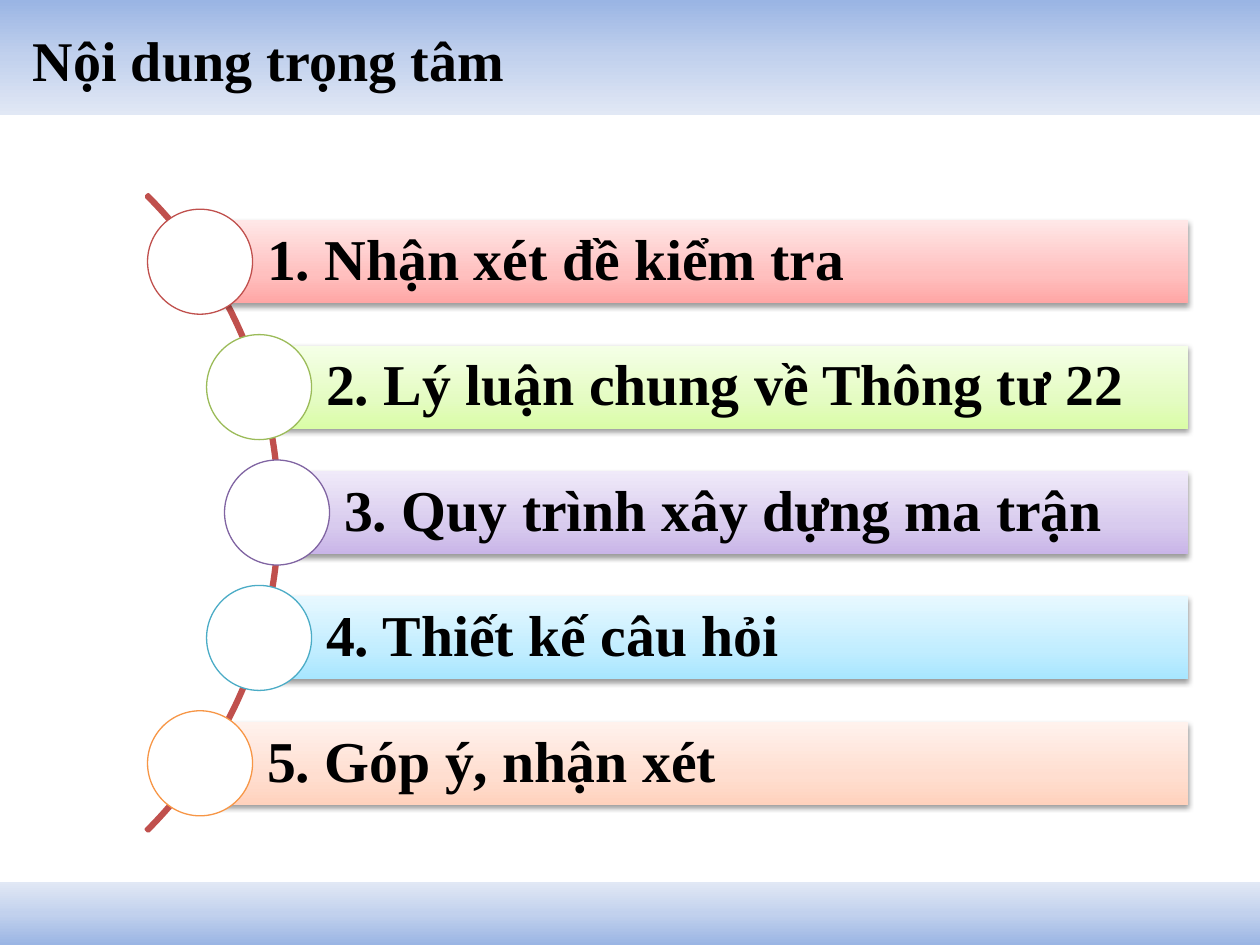
"""Builds the agenda slide: five gradient bars hung on an arc."""
import math
from pptx import Presentation, util as u
from pptx.dml.color import RGBColor
from pptx.enum import shapes, text
from pptx.oxml import parse_xml
from pptx.oxml.ns import nsdecls

TITLE = "Nội dung trọng tâm"
TOPICS = [
    ("1. Nhận xét đề kiểm tra", "C0504D", ("FFA6A5", "FFC0BF", "FFE7E7")),
    ("2. Lý luận chung về Thông tư 22", "9BBB59", ("DAFDA7", "E4FCC2", "F5FFE7")),
    ("3. Quy trình xây dựng ma trận", "8064A2", ("C9B5E8", "D8CBEE", "F0EAF9")),
    ("4. Thiết kế câu hỏi", "4BACC6", ("A7E6FF", "C1EDFF", "E7F8FF")),
    ("5. Góp ý, nhận xét", "F79646", ("FFD2BD", "FFDED0", "FFF2ED")),
]
BAND_COLORS = ("9AB5E4", "C2D1ED", "E1E8F5")
BANDS = [(0, 115, 90), (882, 63, 270)]
ARC_X, ARC_Y, ARC_SIZE = -620, 63, 900
CENTER_X, CENTER_Y, RADIUS = -170, 512.5, 447
PITCH, BAR_HEIGHT, BAR_RIGHT, CIRCLE = 125.4, 83, 1188, 105
FONT = "Times New Roman"


def px(value):
    return u.Emu(round(value * 914400 / 126))


def color(value):
    return RGBColor.from_string(value)


def add_shape(parent, kind, left, top, width, height, line=None, weight=0.75):
    shape = parent.add_shape(kind, px(left), px(top), px(width), px(height))
    shape.shadow.inherit = False
    shape.fill.background()
    if line:
        shape.line.color.rgb = color(line)
        shape.line.width = u.Pt(weight)
    else:
        shape.line.fill.background()
    return shape


def set_gradient(shape, colors, middle, angle):
    shape.fill.gradient()
    shape.fill.gradient_angle = 360 - angle
    stops = "".join(
        f'<a:gs pos="{place * 1000}"><a:srgbClr val="{value}"/></a:gs>'
        for place, value in zip((0, middle, 100), colors))
    old = shape.element.spPr.find(".//{*}gsLst")
    old.getparent().replace(old, parse_xml(f'<a:gsLst {nsdecls("a")}>{stops}</a:gsLst>'))


def add_shadow(shape):
    effects = shape.element.spPr.find("{*}effectLst")
    effects.append(parse_xml(
        f'<a:outerShdw {nsdecls("a")} blurRad="{u.Pt(3.1)}" dist="{u.Pt(1.6)}" dir="5400000" '
        'rotWithShape="0"><a:srgbClr val="000000"><a:alpha val="38000"/></a:srgbClr></a:outerShdw>'))


def write(shape, words, size, insets, spacing=1.0):
    frame = shape.text_frame
    frame.word_wrap = True
    frame.auto_size = text.MSO_AUTO_SIZE.NONE
    frame.vertical_anchor = text.MSO_ANCHOR.MIDDLE
    frame.margin_left, frame.margin_top, frame.margin_right, frame.margin_bottom = map(px, insets)
    para = frame.paragraphs[0]
    para.alignment = text.PP_ALIGN.LEFT
    para.line_spacing = spacing
    span = para.add_run()
    span.text = words
    span.font.name, span.font.size, span.font.bold = FONT, u.Pt(size), True
    span.font.color.rgb = color("000000")


def main():
    kinds = shapes.MSO_SHAPE
    deck = Presentation()
    deck.slide_width, deck.slide_height = px(1260), px(945)
    page = deck.slides.add_slide(deck.slide_layouts[5])

    title = page.shapes.title
    title.left, title.top, title.width, title.height = map(px, (21, 3, 1218, 113))
    write(title, TITLE, 32, (12, 6, 12, 6))
    for top, height, angle in BANDS:
        band = add_shape(page.shapes, kinds.RECTANGLE, 0, top, 1260, height)
        set_gradient(band, BAND_COLORS, 50, angle)
        title.element.addprevious(band.element)

    agenda = page.shapes.add_group_shape().shapes
    arc = add_shape(agenda, kinds.BLOCK_ARC, ARC_X, ARC_Y, ARC_SIZE, ARC_SIZE, "C0504D", 2)
    for index, value in enumerate((189, 27, 0.003)):
        arc.adjustments[index] = value

    for index, (words, outline, colors) in enumerate(TOPICS):
        offset = (index - (len(TOPICS) - 1) / 2) * PITCH
        x = CENTER_X + math.sqrt(RADIUS ** 2 - offset ** 2)
        y = CENTER_Y + offset
        bar = add_shape(agenda, kinds.RECTANGLE, x, y - BAR_HEIGHT / 2, BAR_RIGHT - x, BAR_HEIGHT)
        set_gradient(bar, colors, 35, 270)
        add_shadow(bar)
        write(bar, words, 33, (67, 11, 11, 11), 0.9)
        circle = add_shape(agenda, kinds.OVAL, x - CIRCLE / 2, y - CIRCLE / 2,
                           CIRCLE, CIRCLE, outline)
        circle.fill.solid()
        circle.fill.fore_color.rgb = color("FFFFFF")

    deck.save("out.pptx")


if __name__ == "__main__":
    main()
